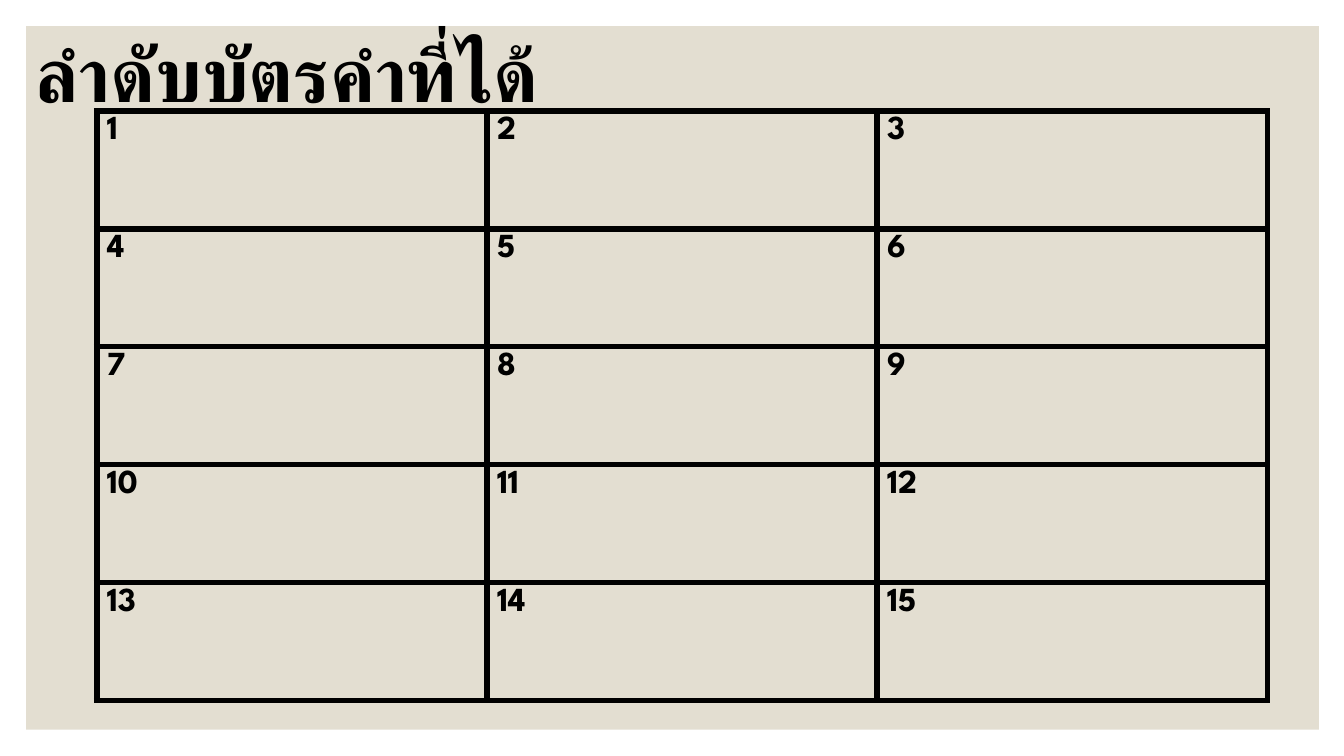
from lxml.etree import SubElement
from pptx import Presentation
from pptx.dml.color import RGBColor
from pptx.enum.shapes import MSO_SHAPE
from pptx.enum.text import MSO_AUTO_SIZE, PP_ALIGN
from pptx.oxml.ns import qn
from pptx.util import Inches, Pt

BLACK = RGBColor(0x00, 0x00, 0x00)
BEIGE = RGBColor(0xE3, 0xDE, 0xD1)
ROWS, COLUMNS = 5, 3
COLUMN_WIDTH, ROW_HEIGHT = 3.87, 1.17
BORDER_WIDTH = Pt(4.5)


def style_run(run, font_name, size):
    font_format = {"name": font_name, "size": Pt(size), "bold": True}
    for attribute, value in font_format.items():
        setattr(run.font, attribute, value)
    run.font.color.rgb = BLACK


def add_panel(slide):
    panel = slide.shapes.add_shape(
        MSO_SHAPE.RECTANGLE, Inches(0.26), Inches(0.26), Inches(12.82), Inches(6.98)
    )
    panel.shadow.inherit = False
    panel.fill.solid()
    panel.fill.fore_color.rgb = BEIGE
    panel.line.fill.background()


def add_borders(cell):
    properties = cell._tc.get_or_add_tcPr()
    for position, side in enumerate(("a:lnL", "a:lnR", "a:lnT", "a:lnB")):
        border = properties.makeelement(qn(side), {"w": str(BORDER_WIDTH)})
        properties.insert(position, border)
        fill = SubElement(border, qn("a:solidFill"))
        SubElement(fill, qn("a:srgbClr"), val=str(BLACK))


def add_card_grid(slide):
    grid = slide.shapes.add_table(
        ROWS, COLUMNS, Inches(0.96), Inches(1.1),
        Inches(COLUMNS * COLUMN_WIDTH), Inches(ROWS * ROW_HEIGHT),
    ).table
    grid.first_row = False
    grid.horz_banding = False
    for column in grid.columns:
        column.width = Inches(COLUMN_WIDTH)
    for row in grid.rows:
        row.height = Inches(ROW_HEIGHT)
    for number, cell in enumerate(grid.iter_cells(), start=1):
        cell.fill.background()
        add_borders(cell)
        label = cell.text_frame.paragraphs[0].add_run()
        label.text = str(number)
        style_run(label, "League Spartan", 24)


def add_title(slide, text):
    title = slide.shapes.add_textbox(
        Inches(0), Inches(0.22), Inches(5.69), Inches(1.01)
    )
    frame = title.text_frame
    frame.word_wrap = False
    frame.auto_size = MSO_AUTO_SIZE.SHAPE_TO_FIT_TEXT
    paragraph = frame.paragraphs[0]
    paragraph.alignment = PP_ALIGN.CENTER
    run = paragraph.add_run()
    run.text = text
    style_run(run, "Roboto", 54)
    # Thai letters take the complex-script font
    SubElement(run.font._element, qn("a:cs"), typeface="Roboto")


def main():
    presentation = Presentation()
    presentation.slide_width = Inches(13.33)
    presentation.slide_height = Inches(7.5)
    slide = presentation.slides.add_slide(presentation.slide_layouts[6])

    # Beige panel inside the white margin
    add_panel(slide)

    # Numbered spaces for the word cards
    add_card_grid(slide)

    # Heading
    add_title(slide, "ลำดับบัตรคำที่ได้")

    presentation.save("out.pptx")


if __name__ == "__main__":
    main()
